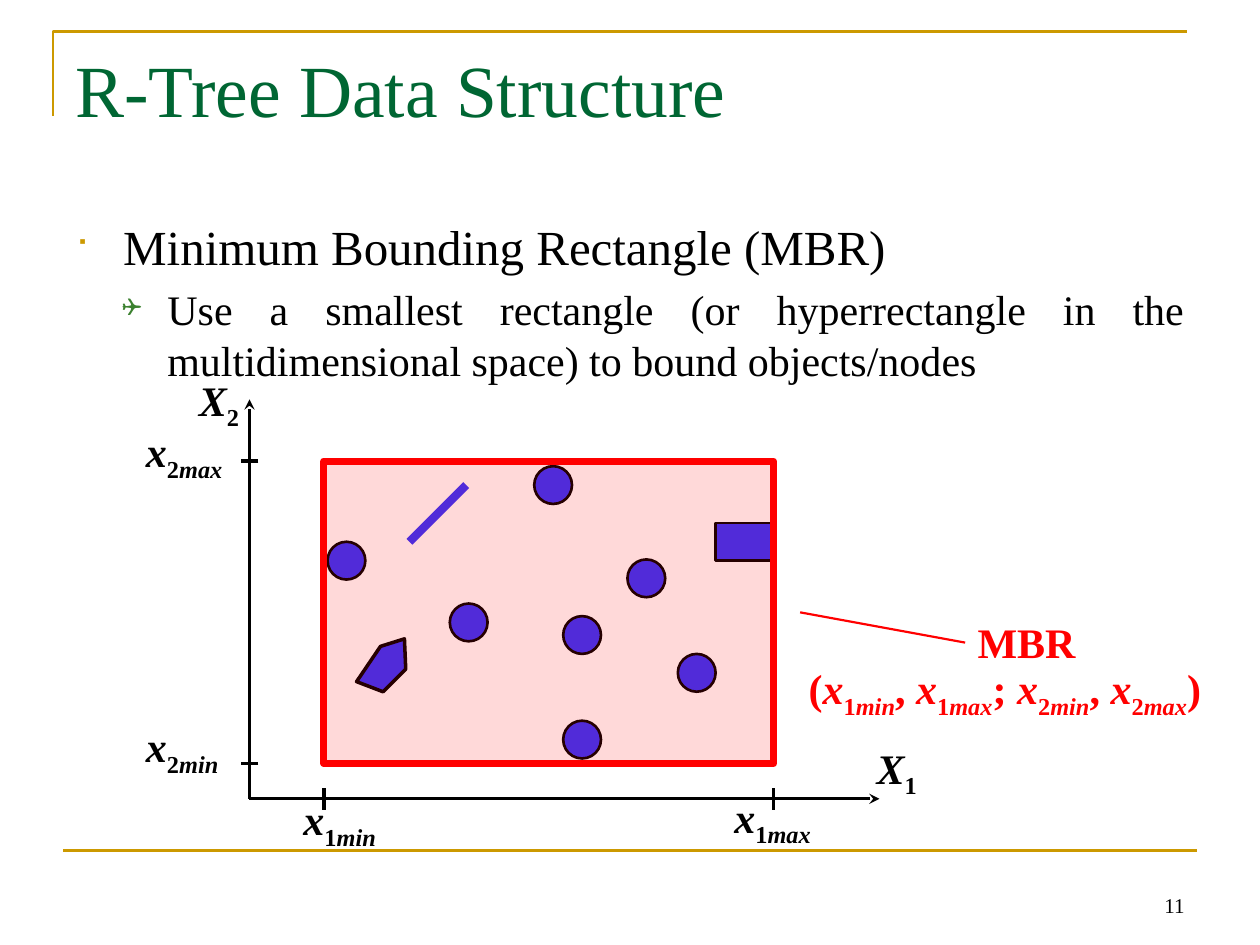
"""Build the R-Tree minimum bounding rectangle slide on a grid of 100 columns by 75 rows."""
from lxml import etree
from pptx import Presentation
from pptx import util as u
from pptx.dml.color import RGBColor
from pptx.enum import shapes, text
from pptx.oxml.ns import qn

COL = {"gold": "CC9900", "title": "006633", "bullet": "3B812F", "ink": "000000",
       "object": "3333FF", "mbr": "FF0000"}
RGB = {name: RGBColor.from_string(value) for name, value in COL.items()}
FONT = "Times New Roman"

prs = Presentation()
prs.slide_width, prs.slide_height = u.Inches(10), u.Inches(7.5)
CELL = prs.slide_width // 100
s = prs.slides.add_slide(prs.slide_layouts[6])


def add_line(x1, y1, x2, y2, color, width, arrow=False):
    sp = s.shapes.add_connector(shapes.MSO_CONNECTOR.STRAIGHT,
                                *(round(v * CELL) for v in (x1, y1, x2, y2)))
    sp.line.color.rgb, sp.line.width = RGB[color], u.Pt(width)
    if arrow:
        etree.SubElement(sp.line._get_or_add_ln(), qn("a:tailEnd"), type="stealth")
    etree.SubElement(sp._element.spPr, qn("a:effectLst"))


def add_text(box, paragraphs, color, size, bold=False, wrap=True, anchor="TOP"):
    tf = s.shapes.add_textbox(*(round(v * CELL) for v in box)).text_frame
    tf.word_wrap = wrap
    tf.vertical_anchor = text.MSO_ANCHOR[anchor]
    if not wrap:
        tf.auto_size = text.MSO_AUTO_SIZE.SHAPE_TO_FIT_TEXT
    for i, spans in enumerate(paragraphs):
        p = tf.add_paragraph() if i else tf.paragraphs[0]
        for words, style in spans:
            r = p.add_run()
            r.text = words
            look = {"name": FONT, "size": u.Pt(size), "bold": bold, "italic": "i" in style}
            for key, value in look.items():
                setattr(r.font, key, value)
            r.font.color.rgb = RGB[color]
            if "s" in style:
                r.font._element.set("baseline", "-25000")
    return tf


fb = s.shapes.build_freeform(round(4.2 * CELL), round(9.2 * CELL))
fb.add_line_segments([(round(x * CELL), round(y * CELL)) for x, y in ((4.2, 2.5), (94.2, 2.5))],
                     close=False)
sp = fb.convert_to_shape()
sp.shadow.inherit = False
sp.fill.background()
sp.line.color.rgb, sp.line.width = RGB["gold"], u.Pt(1.5)
add_line(5, 67.5, 95, 67.5, "gold", 1.5)

add_text((5, 3, 90, 12.5), [[("R-Tree Data Structure", "")]], "title", 42)
tf = add_text((5, 16.7, 90, 49.5), [
    [("Minimum Bounding Rectangle (MBR)", "")],
    [("Use a smallest rectangle (or hyperrectangle in the multidimensional space) "
      "to bound objects/nodes", "")]], "ink", 24)
levels = [(28, 3.8, 3.8, "■", "gold", 65), (24, 7.3, 3.6, "❑", "bullet", 60)]
for level, (p, (size, left, hang, mark, color, share)) in enumerate(zip(tf.paragraphs, levels)):
    p.level, p.alignment, p.space_before = level, text.PP_ALIGN.JUSTIFY, u.Pt(size * 0.2)
    p.runs[0].font.size = u.Pt(size)
    pPr = p._p.get_or_add_pPr()
    pPr.set("marL", str(round(left * CELL)))
    pPr.set("indent", str(-round(hang * CELL)))
    buClr = etree.SubElement(pPr, qn("a:buClr"))
    etree.SubElement(buClr, qn("a:srgbClr"), val=COL[color])
    etree.SubElement(pPr, qn("a:buSzPct"), val=str(share * 1000))
    etree.SubElement(pPr, qn("a:buFont"), typeface="Wingdings")
    etree.SubElement(pPr, qn("a:buChar"), char=mark)

OVAL, RECT = shapes.MSO_SHAPE.OVAL, shapes.MSO_SHAPE.RECTANGLE
points = [(42.4, 37), (26, 43), (35.7, 47.9), (44.7, 57.2), (49.8, 44.4), (44.7, 48.9), (53.8, 51.9)]
objects = [s.shapes.add_shape(kind, *(round(v * CELL) for v in box)) for kind, box in
           [(OVAL, (x, y, 3, 3)) for x, y in points] + [(RECT, (56.8, 41.5, 4.5, 3))]]
add_line(37, 38.5, 32.5, 43, "object", 4.75)
outline = [(round(x * CELL), round(y * CELL)) for x, y in
           ((30.2, 51.3), (28.3, 54.1), (30.4, 54.9), (32.2, 53.1), (32.1, 50.7))]
fb = s.shapes.build_freeform(*outline[0])
fb.add_line_segments(outline[1:])
objects.append(fb.convert_to_shape())
for sp in objects:
    sp.shadow.inherit = False
    sp.fill.solid()
    sp.fill.fore_color.rgb = RGB["object"]
    sp.line.color.rgb, sp.line.width = RGB["ink"], u.Pt(1.5)
objects[-1].line.width = u.Pt(2)

left, top, right, bottom = 25.7, 36.6, 61.4, 60.6
mbr = s.shapes.add_shape(RECT, *(round(v * CELL) for v in (left, top, right - left, bottom - top)))
mbr.shadow.inherit = False
mbr.fill.solid()
mbr.fill.fore_color.rgb = RGB["mbr"]
etree.SubElement(mbr._element.spPr.find(qn("a:solidFill"))[0], qn("a:alpha"), val="15000")
mbr.line.color.rgb, mbr.line.width = RGB["mbr"], u.Pt(4)
add_line(63.5, 48.6, 76.6, 51, "mbr", 1.25)

axis_x, axis_y = 19.8, 63.4
add_line(axis_x, axis_y, 69.8, axis_y, "ink", 1.5, True)
add_line(axis_x, axis_y, axis_x, 31.7, "ink", 1.5, True)
for x in (left, right):
    add_line(x, axis_y - 0.85, x, axis_y + 0.85, "ink", 2)
for y in (top, bottom):
    add_line(axis_x + 0.7, y, axis_x - 0.7, y, "ink", 2)

bound = {n + end: [("x", "i"), (n, "s"), (end, "si")] for n in "12" for end in ("min", "max")}
formula = [("(", "")]
for key, mark in (("1min", ", "), ("1max", "; "), ("2min", ", "), ("2max", ")")):
    formula += bound[key] + [(mark, "")]
labels = [
    (76.6, 48.4, 9.9, [("MBR", "")], "mbr"),
    (68.6, 58.4, 5.4, [("X", "i"), ("1", "s")], "ink"),
    (14.8, 29.2, 5.4, [("X", "i"), ("2", "s")], "ink"),
    (23.1, 62.5, 8.5, bound["1min"], "ink"),
    (57.3, 62.3, 8.8, bound["1max"], "ink"),
    (10.6, 56.7, 8.5, bound["2min"], "ink"),
    (10.6, 33.3, 8.8, bound["2max"], "ink"),
    (63.2, 52.1, 36.6, formula, "mbr"),
]
for x, y, width, spans, color in labels:
    add_text((x, y, width, 5), [spans], color, 24, bold=True, wrap=False)

tf = add_text((71.7, 68.3, 23.3, 5), [[("11", "")]], "ink", 12, anchor="BOTTOM")
tf.paragraphs[0].alignment = text.PP_ALIGN.RIGHT

prs.save("out.pptx")
